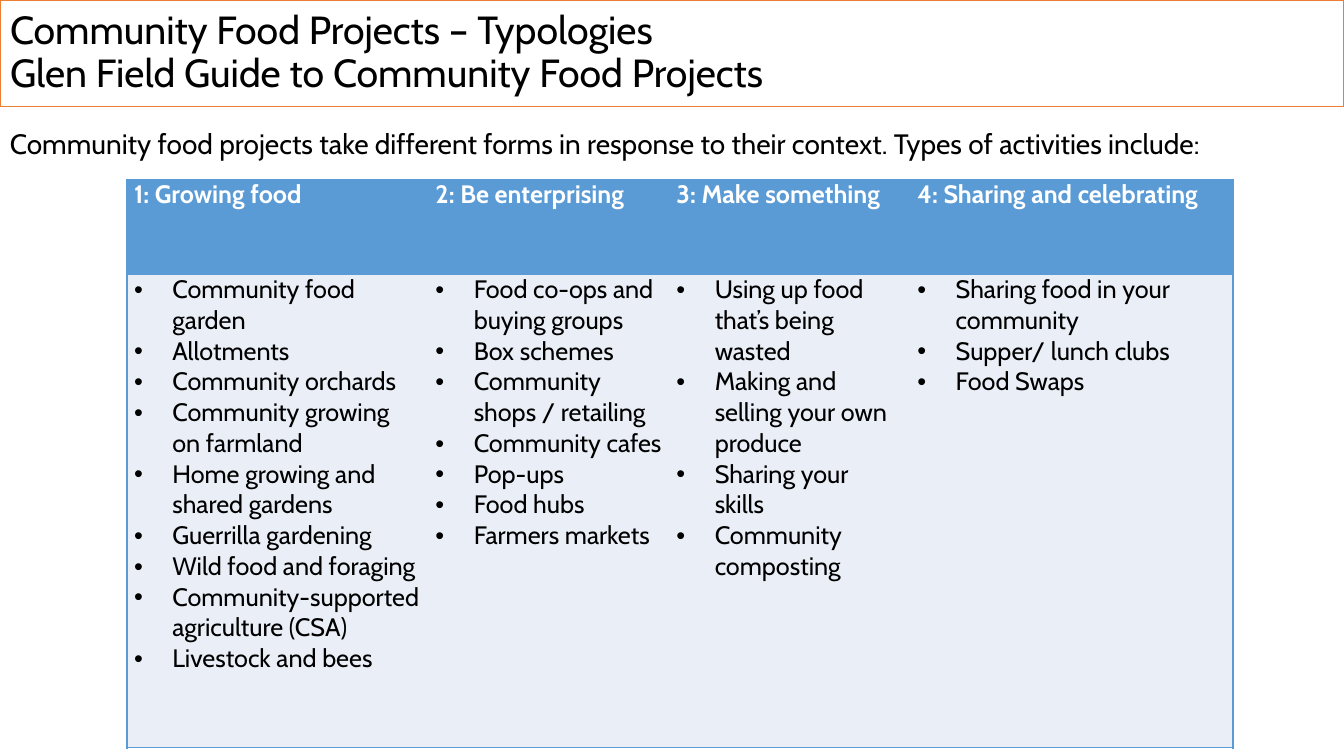
"""Build a slide on the typologies of community food projects."""
import dataclasses

import lxml.etree
import pptx
import pptx.dml.color
import pptx.enum.text
import pptx.oxml.ns
import pptx.util

Inches = pptx.util.Inches


@dataclasses.dataclass(frozen=True)
class Theme:
    font: str = "Cabin"
    black: str = "000000"
    white: str = "FFFFFF"
    orange: str = "ED7D31"
    blue: str = "5B9BD5"
    pale: str = "EAEFF7"
    title: int = 28
    intro: int = 20
    cell: int = 18


theme = Theme()
rgb = pptx.dml.color.RGBColor.from_string
qn = pptx.oxml.ns.qn


def write(frame, *lines, size, color=theme.black, bold=False, bullet=False, spacing=1.0):
    frame.word_wrap = True
    for i, line in enumerate(lines):
        para = frame.add_paragraph() if i else frame.paragraphs[0]
        para.text = line
        para.alignment = pptx.enum.text.PP_ALIGN.LEFT
        para.line_spacing = spacing
        font = para.font
        for run in para.runs:
            font = run.font
            font.name, font.size, font.bold = theme.font, pptx.util.Pt(size), bold
            font.color.rgb = rgb(color)
        if bullet:
            props = para._p.get_or_add_pPr()
            props.set("marL", str(Inches(0.38)))
            props.set("indent", str(-Inches(0.38)))
            lxml.etree.SubElement(props, qn("a:buFont"), typeface="Arial")
            lxml.etree.SubElement(props, qn("a:buChar"), char="•")


def edge(cell, side, color=None):
    line = lxml.etree.SubElement(cell._tc.get_or_add_tcPr(), qn(f"a:ln{side}"), w=str(pptx.util.Pt(1)))
    if color:
        fill = lxml.etree.SubElement(line, qn("a:solidFill"))
        lxml.etree.SubElement(fill, qn("a:srgbClr"), val=color)
    else:
        lxml.etree.SubElement(line, qn("a:noFill"))


deck = pptx.Presentation()
deck.slide_width, deck.slide_height = Inches(13.33), Inches(7.5)
slide = deck.slides.add_slide(deck.slide_layouts[5])

title = slide.shapes.title
title.left, title.top, title.width, title.height = 0, 0, Inches(13.33), Inches(1.06)
title.fill.solid()
title.fill.fore_color.rgb = rgb(theme.white)
title.line.color.rgb = rgb(theme.orange)
title.line.width = pptx.util.Pt(1)
title.text_frame.auto_size = pptx.enum.text.MSO_AUTO_SIZE.NONE
title.text_frame.vertical_anchor = pptx.enum.text.MSO_ANCHOR.MIDDLE
write(title.text_frame,
      "Community Food Projects – Typologies\vGlen Field Guide to Community Food Projects",
      size=theme.title, spacing=0.9)

types = {
    "1: Growing food": (2.99, [
        "Community food garden", "Allotments", "Community orchards",
        "Community growing on farmland", "Home growing and shared gardens",
        "Guerrilla gardening", "Wild food and foraging",
        "Community-supported agriculture (CSA)", "Livestock and bees"]),
    "2: Be enterprising": (2.39, [
        "Food co-ops and buying groups", "Box schemes", "Community shops / retailing",
        "Community cafes", "Pop-ups", "Food hubs", "Farmers markets"]),
    "3: Make something": (2.39, [
        "Using up food that’s being wasted", "Making and selling your own produce",
        "Sharing your skills", "Community composting"]),
    "4: Sharing and celebrating": (3.2, [
        "Sharing food in your community", "Supper/ lunch clubs", "Food Swaps"]),
}
last = len(types) - 1
table = slide.shapes.add_table(2, len(types), Inches(1.26), Inches(1.78),
                               Inches(10.96), Inches(5.63)).table
table.horz_banding = False
table.rows[0].height, table.rows[1].height = Inches(0.94), Inches(4.7)

for col, (head, (width, items)) in enumerate(types.items()):
    table.columns[col].width = Inches(width)
    for row, shade in enumerate((theme.blue, theme.pale)):
        cell = table.cell(row, col)
        cell.margin_left = cell.margin_right = Inches(0.07)
        cell.margin_top = cell.margin_bottom = 0
        edge(cell, "L", theme.blue if col == 0 else None)
        edge(cell, "R", theme.blue if col == last else None)
        edge(cell, "T", theme.blue)
        edge(cell, "B", theme.blue)
        cell.fill.solid()
        cell.fill.fore_color.rgb = rgb(shade)
    write(table.cell(0, col).text_frame, head, size=theme.cell, color=theme.white, bold=True)
    write(table.cell(1, col).text_frame, *items, size=theme.cell, bullet=True)

intro = slide.shapes.add_textbox(0, Inches(1.21), Inches(13.33), Inches(0.44))
write(intro.text_frame,
      "Community food projects take different forms in response to their context. "
      "Types of activities include:", size=theme.intro)

deck.save("out.pptx")
